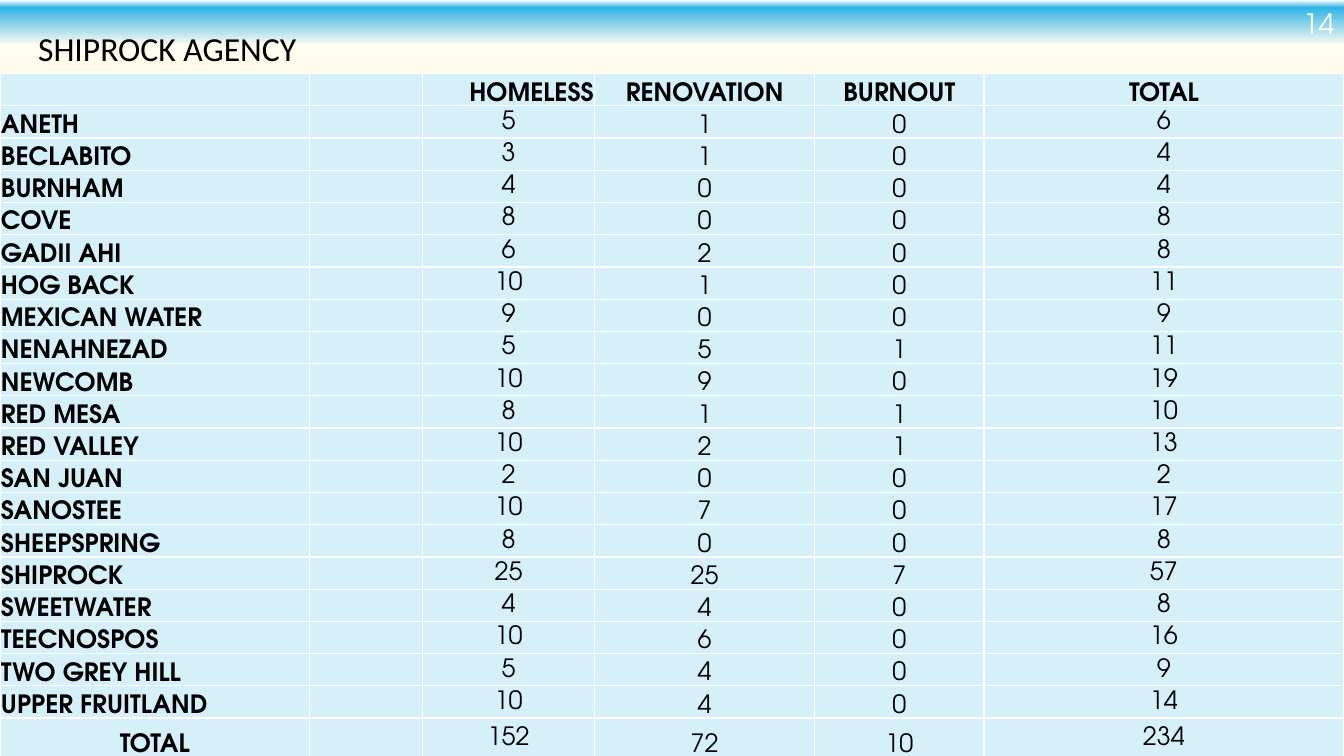
from dataclasses import dataclass

from lxml.etree import SubElement as add_node
from pptx import Presentation
from pptx.dml.color import RGBColor as Color
from pptx.enum.text import MSO_ANCHOR as Anchor, PP_ALIGN as Align
from pptx.oxml.ns import qn
from pptx.util import Inches, Pt


@dataclass(frozen=True)
class Theme:
    """Colours, fonts and type sizes of the slide."""
    ink: str = "000000"
    pale: str = "FEFFFF"
    cell: str = "D6F0FA"
    grid: str = "FFFFFF"
    sky: tuple = ((0, "FFFFFF"), (1, "31B4E6"), (6, "FFFCF1"), (12, "FFF8E2"),
                  (15, "FFEFBC"), (35, "FFE9A5"), (50, "FFE081"),
                  (65, "FFD65B"), (84, "FFCA29"), (93, "595959"))
    title_font: str = "Calibri"
    body_font: str = "TeX Gyre Adventor"
    title_size: int = 24
    number_size: int = 20
    table_size: int = 18


HEADINGS = ("HOMELESS", "RENOVATION", "BURNOUT", "TOTAL")
CHAPTERS = (
    ("ANETH", 5, 1, 0), ("BECLABITO", 3, 1, 0), ("BURNHAM", 4, 0, 0),
    ("COVE", 8, 0, 0), ("GADII AHI", 6, 2, 0), ("HOG BACK", 10, 1, 0),
    ("MEXICAN WATER", 9, 0, 0), ("NENAHNEZAD", 5, 5, 1),
    ("NEWCOMB", 10, 9, 0), ("RED MESA", 8, 1, 1), ("RED VALLEY", 10, 2, 1),
    ("SAN JUAN", 2, 0, 0), ("SANOSTEE", 10, 7, 0), ("SHEEPSPRING", 8, 0, 0),
    ("SHIPROCK", 25, 25, 7), ("SWEETWATER", 4, 4, 0),
    ("TEECNOSPOS", 10, 6, 0), ("TWO GREY HILL", 5, 4, 0),
    ("UPPER FRUITLAND", 10, 4, 0),
)
COLUMN_WIDTHS = (3.07, 1.12, 1.71, 2.18, 1.68, 3.57)
ROW_HEIGHT, LAST_ROW_HEIGHT = 0.32, 0.39


class SlideBuilder:
    """Draws styled elements on the current slide."""

    def __init__(self, page, theme):
        self.page = page
        self.theme = theme

    def background(self):
        """Fill the background with the vertical gradient."""
        fill = self.page.background.fill
        fill.gradient()
        fill.gradient_angle = 270
        stops = self.page.element.xpath(".//a:gsLst")[0]
        for stop in list(stops):
            stops.remove(stop)
        for percent, color in self.theme.sky:
            stop = add_node(stops, qn("a:gs"), pos=str(percent * 1000))
            add_node(stop, qn("a:srgbClr"), val=color)

    def span(self, para, text, size, font, color, bold=False):
        """Add one styled run to a paragraph."""
        span = para.add_run()
        span.text = text
        span.font.size = Pt(size)
        span.font.name = font
        span.font.bold = bold
        span.font.color.rgb = Color.from_string(color)

    def text(self, place, text, size, font, color,
             align=Align.LEFT, anchor=Anchor.TOP):
        """Add a text box with one line of text."""
        box = self.page.shapes.add_textbox(*map(Inches, place))
        frame = box.text_frame
        frame.word_wrap = True
        frame.vertical_anchor = anchor
        para = frame.paragraphs[0]
        para.alignment = align
        self.span(para, text, size, font, color)

    def cell(self, cell, text, align, anchor, bold):
        """Style one table cell and write its text."""
        cell.margin_left = cell.margin_top = cell.margin_right = Inches(0.01)
        cell.margin_bottom = 0
        cell.vertical_anchor = anchor
        properties = cell._tc.get_or_add_tcPr()
        for side in ("lnL", "lnR", "lnT", "lnB"):
            line = add_node(properties, qn(f"a:{side}"), w=str(Pt(1)))
            paint = add_node(line, qn("a:solidFill"))
            add_node(paint, qn("a:srgbClr"), val=self.theme.grid)
        cell.fill.solid()
        cell.fill.fore_color.rgb = Color.from_string(self.theme.cell)
        para = cell.text_frame.paragraphs[0]
        para.alignment = align
        if text:
            self.span(para, text, self.theme.table_size,
                      self.theme.body_font, self.theme.ink, bold)

    def table(self, left, top, widths, heights, rows):
        """Add the table with a heading row, chapter rows and a total row."""
        table = self.page.shapes.add_table(
            len(rows), len(widths), Inches(left), Inches(top),
            Inches(sum(widths)), Inches(sum(heights))).table
        table.first_row = table.horz_banding = False
        for column, width in zip(table.columns, widths):
            column.width = Inches(width)
        for row, height in zip(table.rows, heights):
            row.height = Inches(height)
        last = len(rows) - 1
        for r, values in enumerate(rows):
            for c, value in enumerate(values):
                align = Align.CENTER
                if c == 0 and r < last:
                    align = Align.LEFT
                elif (r, c) == (0, 2):
                    align = Align.RIGHT
                middle = r > 0 and c in (2, 5)
                self.cell(table.cell(r, c), str(value), align,
                          Anchor.MIDDLE if middle else Anchor.BOTTOM,
                          bold=r == 0 or c == 0)


def agency_rows():
    """Return all table rows, with totals worked out."""
    rows = [("", "", *HEADINGS)]
    for name, *counts in CHAPTERS:
        rows.append((name, "", *counts, sum(counts)))
    sums = [sum(column) for column in list(zip(*CHAPTERS))[1:]]
    rows.append(("TOTAL", "", *sums, sum(sums)))
    return rows


def main():
    """Build and save the deck."""
    deck = Presentation()
    deck.slide_width, deck.slide_height = Inches(13.33), Inches(7.5)
    theme = Theme()
    builder = SlideBuilder(deck.slides.add_slide(deck.slide_layouts[6]), theme)
    builder.background()
    rows = agency_rows()
    heights = [ROW_HEIGHT] * (len(rows) - 1) + [LAST_ROW_HEIGHT]
    builder.table(0, 0.73, COLUMN_WIDTHS, heights, rows)
    builder.text((0.28, 0.23, 6.65, 0.5), "SHIPROCK AGENCY",
                 theme.title_size, theme.title_font, theme.ink)
    builder.text((12.48, 0.03, 0.85, 0.4), "14", theme.number_size,
                 theme.body_font, theme.pale, Align.RIGHT, Anchor.MIDDLE)
    deck.save("out.pptx")


if __name__ == "__main__":
    main()
